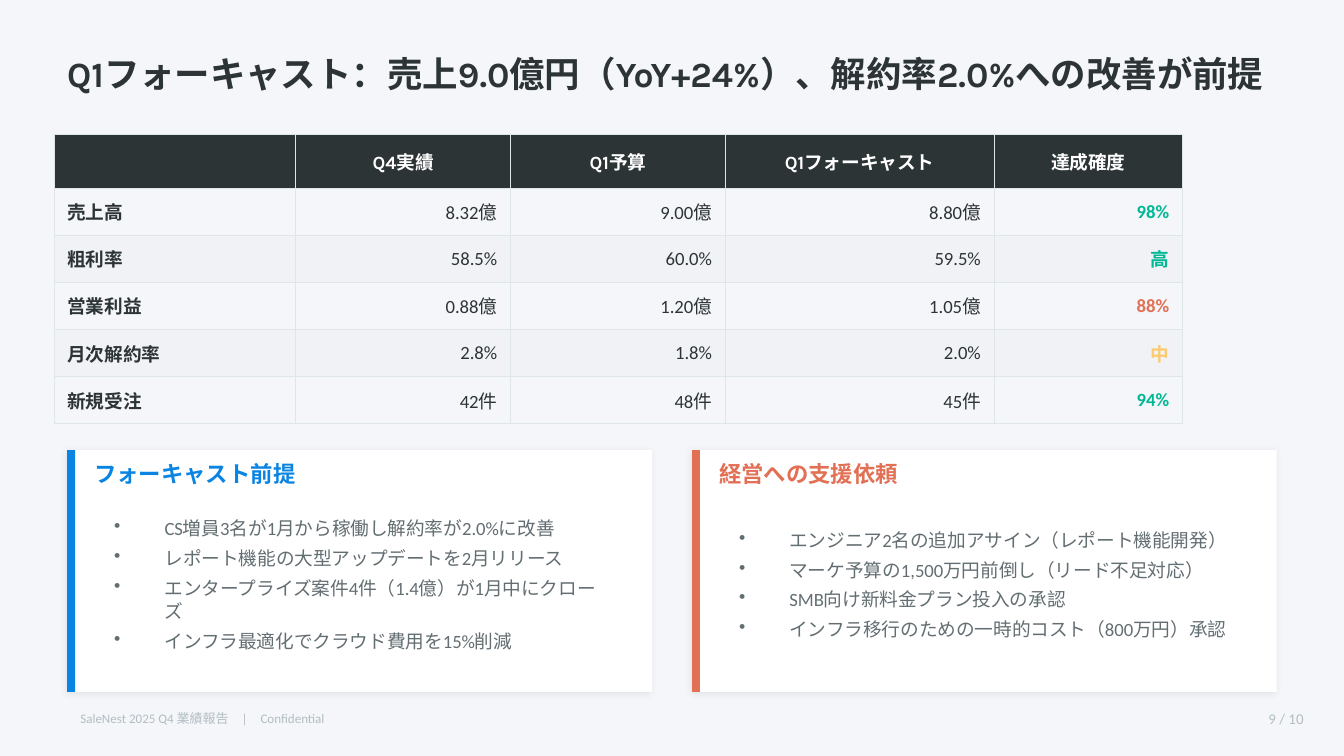
from dataclasses import dataclass

from lxml import etree
from pptx import Presentation
from pptx.dml.color import RGBColor
from pptx.enum.shapes import MSO_SHAPE
from pptx.enum.text import MSO_ANCHOR, PP_ALIGN
from pptx.oxml import parse_xml
from pptx.util import Cm, Pt

RECT = MSO_SHAPE.RECTANGLE
MIDDLE = MSO_ANCHOR.MIDDLE
LEFT, CENTER, RIGHT = PP_ALIGN.LEFT, PP_ALIGN.CENTER, PP_ALIGN.RIGHT
A = "http://schemas.openxmlformats.org/drawingml/2006/main"


@dataclass(frozen=True)
class Theme:
    background: str = "F5F6FA"
    dark: str = "2D3436"
    body: str = "636E72"
    muted: str = "B2BEC3"
    border: str = "DFE6E9"
    band: str = "F1F2F6"
    white: str = "FFFFFF"
    blue: str = "0984E3"
    good: str = "00B894"
    warn: str = "FDCB6E"
    bad: str = "E17055"
    heading_font: str = "Karla"
    body_font: str = "Calibri"
    title_size: float = 19
    card_size: float = 12
    text_size: float = 10
    page_size: float = 8
    footer_size: float = 7


theme = Theme()


def write(paragraph, text, size, color, font, bold=False, align=LEFT):
    paragraph.alignment = align
    run = paragraph.add_run()
    run.text = text
    run.font.size = Pt(size)
    run.font.name = font
    run.font.bold = bold
    run.font.color.rgb = RGBColor.from_string(color)


def add_frame(left, top, width, height, inset=True):
    frame = slide.shapes.add_textbox(Cm(left), Cm(top), Cm(width), Cm(height)).text_frame
    frame.word_wrap = True
    frame.vertical_anchor = MIDDLE
    if not inset:
        frame.margin_left = frame.margin_right = 0
        frame.margin_top = frame.margin_bottom = 0
    return frame


prs = Presentation()
prs.slide_width, prs.slide_height = Cm(25.4), Cm(14.29)
slide = prs.slides.add_slide(prs.slide_layouts[6])
slide.background.fill.solid()
slide.background.fill.fore_color.rgb = RGBColor.from_string(theme.background)

# Title
title = add_frame(1.27, 0.76, 22.86, 1.27, inset=False)
write(title.paragraphs[0], "Q1フォーキャスト：売上9.0億円（YoY+24%）、解約率2.0%への改善が前提",
      theme.title_size, theme.dark, theme.heading_font, bold=True)

# Forecast table
forecast = [
    ("", "Q4実績", "Q1予算", "Q1フォーキャスト", "達成確度"),
    ("売上高", "8.32億", "9.00億", "8.80億", "98%"),
    ("粗利率", "58.5%", "60.0%", "59.5%", "高"),
    ("営業利益", "0.88億", "1.20億", "1.05億", "88%"),
    ("月次解約率", "2.8%", "1.8%", "2.0%", "中"),
    ("新規受注", "42件", "48件", "45件", "94%"),
]
confidence_colors = {"98%": theme.good, "高": theme.good, "88%": theme.bad,
                     "中": theme.warn, "94%": theme.good}
column_widths = [4.57, 4.06, 4.06, 5.08, 3.56]
row_heights = [0.81] + [0.89] * 5
table = slide.shapes.add_table(len(forecast), len(column_widths), Cm(1.02), Cm(2.54),
                               Cm(sum(column_widths)), Cm(sum(row_heights))).table
table.horz_banding = False
for column, width in zip(table.columns, column_widths):
    column.width = Cm(width)
for row, height in zip(table.rows, row_heights):
    row.height = Cm(height)

for r, values in enumerate(forecast):
    for c, value in enumerate(values):
        cell = table.cell(r, c)
        cell.vertical_anchor = MIDDLE
        for side in ("lnL", "lnR", "lnT", "lnB"):
            cell._tc.get_or_add_tcPr().append(parse_xml(
                f'<a:{side} xmlns:a="{A}" w="{Pt(0.5)}"><a:solidFill>'
                f'<a:srgbClr val="{theme.border}"/></a:solidFill></a:{side}>'))
        if r % 2 and r > 0:
            cell.fill.background()
        else:
            cell.fill.solid()
            cell.fill.fore_color.rgb = RGBColor.from_string(theme.band if r else theme.dark)
        paragraph = cell.text_frame.paragraphs[0]
        if r == 0:
            write(paragraph, value, theme.text_size, theme.white, theme.heading_font, True, CENTER)
        else:
            write(paragraph, value, theme.text_size, confidence_colors.get(value, theme.dark),
                  theme.body_font, c in (0, 4), RIGHT if c else LEFT)

# Cards: assumptions and support requests
cards = [
    (1.27, theme.blue, "フォーキャスト前提", [
        "CS増員3名が1月から稼働し解約率が2.0%に改善",
        "レポート機能の大型アップデートを2月リリース",
        "エンタープライズ案件4件（1.4億）が1月中にクローズ",
        "インフラ最適化でクラウド費用を15%削減",
    ]),
    (13.08, theme.bad, "経営への支援依頼", [
        "エンジニア2名の追加アサイン（レポート機能開発）",
        "マーケ予算の1,500万円前倒し（リード不足対応）",
        "SMB向け新料金プラン投入の承認",
        "インフラ移行のための一時的コスト（800万円）承認",
    ]),
]
for left, accent, heading, points in cards:
    for width, color in ((11.05, theme.white), (0.15, accent)):
        panel = slide.shapes.add_shape(RECT, Cm(left), Cm(8.51), Cm(width), Cm(4.57))
        panel.shadow.inherit = False
        panel.fill.solid()
        panel.fill.fore_color.rgb = RGBColor.from_string(color)
        panel.line.fill.background()
        if color == theme.white:
            effects = panel._element.spPr.find(f"{{{A}}}effectLst")
            effects.append(parse_xml(
                f'<a:outerShdw xmlns:a="{A}" blurRad="{Pt(4)}" dist="{Pt(1)}" dir="8100000" '
                'algn="bl" rotWithShape="0"><a:srgbClr val="000000">'
                '<a:alpha val="8000"/></a:srgbClr></a:outerShdw>'))

    heading_frame = add_frame(left + 0.51, 8.64, 9.91, 0.64, inset=False)
    write(heading_frame.paragraphs[0], heading, theme.card_size, accent,
          theme.heading_font, bold=True)

    point_frame = add_frame(left + 0.64, 9.4, 9.91, 3.3)
    for i, point in enumerate(points):
        paragraph = point_frame.add_paragraph() if i else point_frame.paragraphs[0]
        paragraph.space_after = Pt(4)
        properties = paragraph._p.get_or_add_pPr()
        properties.set("marL", str(Cm(0.95)))
        properties.set("indent", str(-Cm(0.95)))
        etree.SubElement(properties, f"{{{A}}}buChar", char="•")
        write(paragraph, point, theme.text_size, theme.body, theme.body_font)

# Page number and footer
page = add_frame(23.11, 13.26, 1.78, 0.64)
write(page.paragraphs[0], "9 / 10", theme.page_size, theme.muted, theme.body_font, align=RIGHT)
footer = add_frame(1.27, 13.26, 10.16, 0.64)
write(footer.paragraphs[0], "SaleNest 2025 Q4 業績報告　|　Confidential",
      theme.footer_size, theme.muted, theme.body_font)

prs.save("out.pptx")
